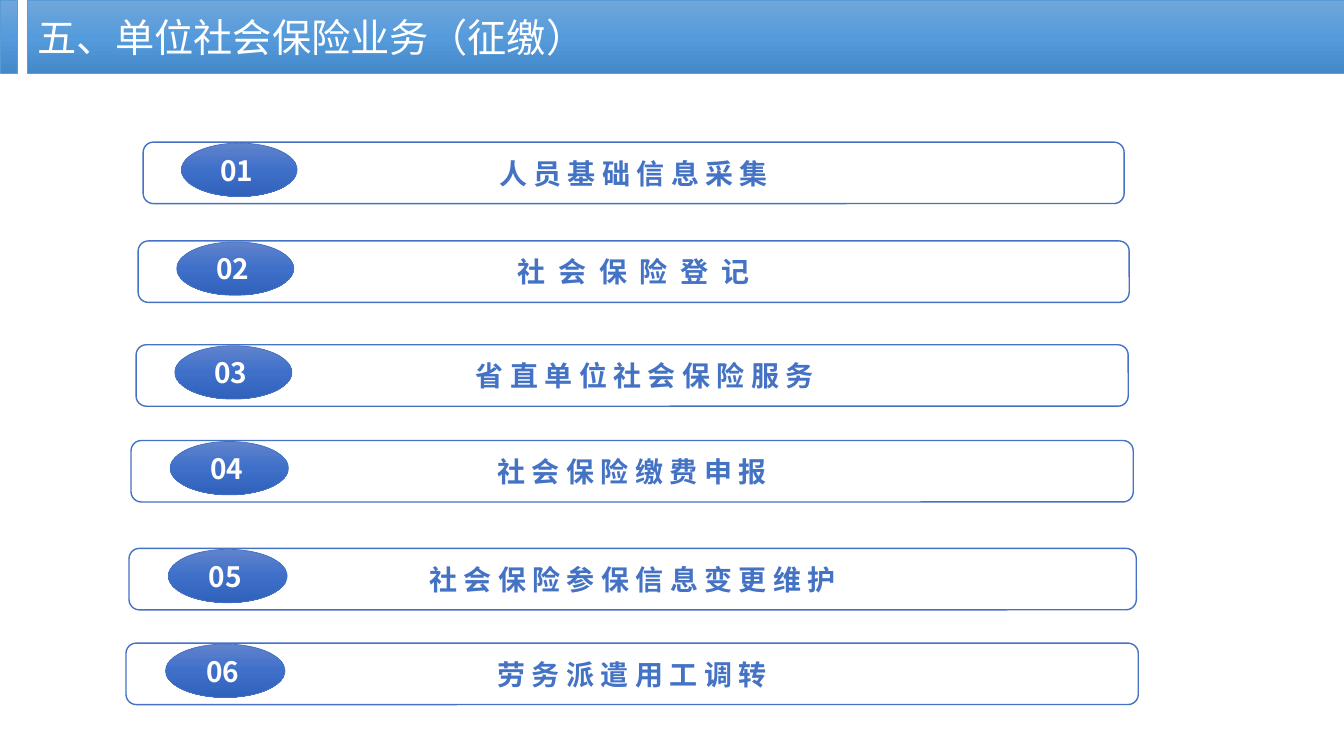
from copy import deepcopy

from lxml.etree import SubElement
from pptx import Presentation
from pptx.dml.color import RGBColor
from pptx.enum.shapes import MSO_SHAPE as Shape
from pptx.enum.text import MSO_ANCHOR as Anchor, PP_ALIGN as Align
from pptx.oxml.ns import qn
from pptx.util import Inches, Pt

COLORS = {
    "white": "FFFFFF",
    "blue": "4472C4",
    "sky": "5B9BD5",
}
GRADIENTS = {
    "header": ("71A6DB", "559BDB", "448ACA"),
    "badge": ("6183CB", "3E70CA", "3062BB"),
}
FONT = "Noto Sans CJK SC"


def rgb(name):
    return RGBColor.from_string(COLORS[name])


class Deck:
    def __init__(self, width, height):
        self.prs = Presentation()
        self.prs.slide_width = Inches(width)
        self.prs.slide_height = Inches(height)
        self.slide = self.prs.slides.add_slide(self.prs.slide_layouts[6])

    def group(self):
        return self.slide.shapes.add_group_shape().shapes

    def shape(self, kind, box, line, weight, gradient=None, parent=None):
        shapes = self.slide.shapes if parent is None else parent
        s = shapes.add_shape(kind, *map(Inches, box))
        s.shadow.inherit = False
        s.line.color.rgb = rgb(line)
        s.line.width = Pt(weight)
        if gradient:
            self.shade(s, GRADIENTS[gradient])
        else:
            s.fill.solid()
            s.fill.fore_color.rgb = rgb("white")
        return s

    def shade(self, s, colors):
        """Fill from top to bottom with three evenly spaced colours."""
        s.fill.gradient()
        s.fill.gradient_angle = 270
        stops = s._element.spPr.find(".//" + qn("a:gsLst"))
        stops.insert(1, deepcopy(stops[0]))
        for i, (stop, color) in enumerate(zip(s.fill.gradient_stops, colors)):
            stop.position = i / 2
            stop.color.rgb = RGBColor.from_string(color)

    def text_box(self, box, parent=None):
        shapes = self.slide.shapes if parent is None else parent
        return shapes.add_textbox(*map(Inches, box))

    def put_text(self, s, text, size, color, bold=False, align=Align.LEFT,
                 anchor=Anchor.TOP, wrap=True, spacing=0, indent=0.1):
        tf = s.text_frame
        frame = {"word_wrap": wrap, "vertical_anchor": anchor,
                 "margin_left": Inches(indent)}
        for name, value in frame.items():
            setattr(tf, name, value)
        p = tf.paragraphs[0]
        p.alignment = align
        r = p.add_run()
        r.text = text
        for name, value in {"size": Pt(size), "bold": bold, "name": FONT}.items():
            setattr(r.font, name, value)
        r.font.color.rgb = rgb(color)
        # East Asian font and letter spacing
        rPr = r._r.get_or_add_rPr()
        SubElement(rPr, qn("a:ea")).set("typeface", FONT)
        if spacing:
            rPr.set("spc", str(int(spacing * 100)))

    def item(self, number, text, left, top, width, **style):
        """A numbered bar; the badge scales with the width of the bar."""
        parts = self.group()
        bar = self.shape(Shape.ROUNDED_RECTANGLE, (left, top, width, 0.61),
                         "blue", 1, parent=parts)
        self.put_text(bar, " ".join(text), 20, "blue", bold=True,
                      align=Align.CENTER, anchor=Anchor.MIDDLE, **style)
        self.shape(Shape.OVAL,
                   (left + 0.039 * width, top + 0.01, 0.118 * width, 0.53),
                   "blue", 0.5, "badge", parts)
        label = self.text_box(
            (left + 0.04 * width, top + 0.06, 0.111 * width, 0.44), parts)
        self.put_text(label, f"{number:02d}", 20, "white", bold=True,
                      align=Align.CENTER, wrap=False)


# Text, left, top, width, text style
ITEMS = [
    ("人员基础信息采集", 1.42, 1.41, 9.73, {}),
    ("社会保险登记", 1.37, 2.39, 9.83, {"spacing": 2.25}),
    ("省直单位社会保险服务", 1.35, 3.42, 9.84, {"indent": 0.35}),
    ("社会保险缴费申报", 1.3, 4.37, 9.94, {}),
    ("社会保险参保信息变更维护", 1.28, 5.44, 9.99, {}),
    ("劳务派遣用工调转", 1.25, 6.38, 10.04, {}),
]


def main():
    deck = Deck(13.33, 7.5)

    # Header band and title
    for left, width in ((0, 0.17), (0.27, 13.06)):
        deck.shape(Shape.RECTANGLE, (left, 0, width, 0.73), "sky", 0.5, "header")
    title = deck.text_box((0.27, 0.08, 6.95, 1.04))
    deck.put_text(title, "五、单位社会保险业务（征缴）", 28, "white")

    # Numbered bars
    for number, (text, left, top, width, style) in enumerate(ITEMS, 1):
        deck.item(number, text, left, top, width, **style)

    deck.prs.save("out.pptx")


if __name__ == "__main__":
    main()
